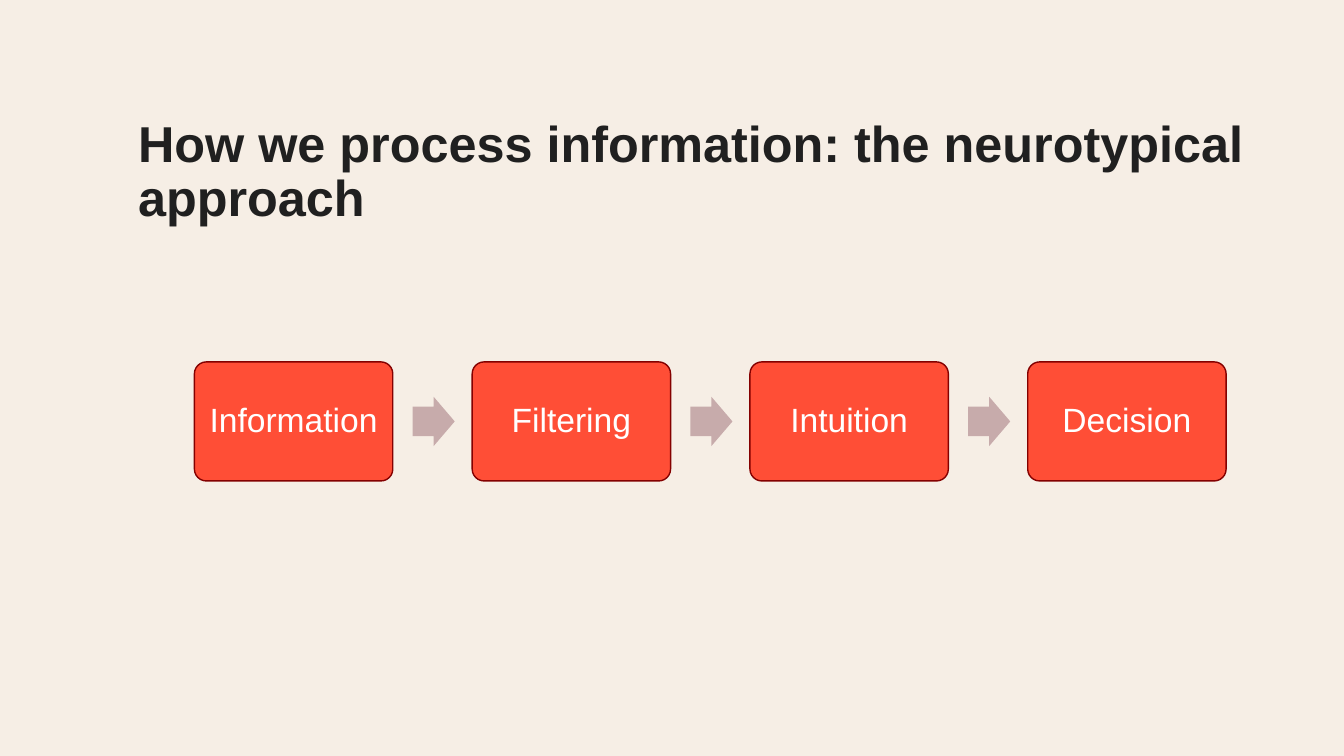
from pptx import Presentation
from pptx import util as u
from pptx.dml.color import RGBColor
from pptx.enum import shapes, text

# Content
TITLE = "How we process information: the neurotypical approach"
STEPS = ["Information", "Filtering", "Intuition", "Decision"]
COLOURS = {"paper": "F6EEE5", "ink": "202020", "step": "FF4E36",
           "edge": "840000", "arrow": "C7ABAB", "label": "FFFFFF"}
TITLE_FONT = {"name": "Arial", "size": u.Pt(36), "bold": True}
LABEL_FONT = {"name": "Arial", "size": u.Pt(24), "bold": False}

# Layout in centimetres
TITLE_BOX = (3.23, 2.87, 29.34, 1.35)
STEP_LEFT, STEP_PITCH = 4.9, 7.0
STEP_WIDTH, STEP_HEIGHT = 5.0, 3.0
ARROW_GAP, ARROW_WIDTH, ARROW_HEIGHT = 0.5, 1.06, 1.24
MIDDLE = 10.62
INSET = 0.25


def colour(name):
    return RGBColor.from_string(COLOURS[name])


def write(shape, words, font, ink, align, anchor, margins):
    frame = shape.text_frame
    frame.word_wrap = True
    frame.vertical_anchor = anchor
    for side, margin in zip(("left", "top", "right", "bottom"), margins):
        setattr(frame, f"margin_{side}", u.Cm(margin))
    para = frame.paragraphs[0]
    para.alignment = align
    para.line_spacing = 0.9
    span = para.add_run()
    span.text = words
    for key, value in font.items():
        setattr(span.font, key, value)
    span.font.color.rgb = colour(ink)


def add_block(page, kind, left, width, height, fill, adjustments):
    block = page.shapes.add_shape(
        kind, u.Cm(left), u.Cm(MIDDLE - height / 2), u.Cm(width), u.Cm(height))
    block.shadow.inherit = False
    block.fill.solid()
    block.fill.fore_color.rgb = colour(fill)
    block.line.fill.background()
    for index, value in enumerate(adjustments):
        block.adjustments[index] = value
    return block


def main():
    deck = Presentation()
    deck.slide_width, deck.slide_height = u.Cm(33.87), u.Cm(19.05)
    page = deck.slides.add_slide(deck.slide_layouts[6])
    page.background.fill.solid()
    page.background.fill.fore_color.rgb = colour("paper")

    # Title
    box = page.shapes.add_textbox(*map(u.Cm, TITLE_BOX))
    write(box, TITLE, TITLE_FONT, "ink", text.PP_ALIGN.LEFT,
          text.MSO_ANCHOR.TOP, (0.25, 0.13, 0.25, 0.13))

    # Steps, with an arrow after each but the last
    for index, step in enumerate(STEPS):
        left = STEP_LEFT + index * STEP_PITCH
        block = add_block(page, shapes.MSO_SHAPE.ROUNDED_RECTANGLE, left,
                          STEP_WIDTH, STEP_HEIGHT, "step", [0.1])
        block.line.color.rgb = colour("edge")
        block.line.width = u.Pt(1)
        write(block, step, LABEL_FONT, "label", text.PP_ALIGN.CENTER,
              text.MSO_ANCHOR.MIDDLE, [INSET] * 4)
        if index < len(STEPS) - 1:
            add_block(page, shapes.MSO_SHAPE.RIGHT_ARROW,
                      left + STEP_WIDTH + ARROW_GAP, ARROW_WIDTH, ARROW_HEIGHT,
                      "arrow", [0.6, 0.5])

    deck.save("out.pptx")


if __name__ == "__main__":
    main()
